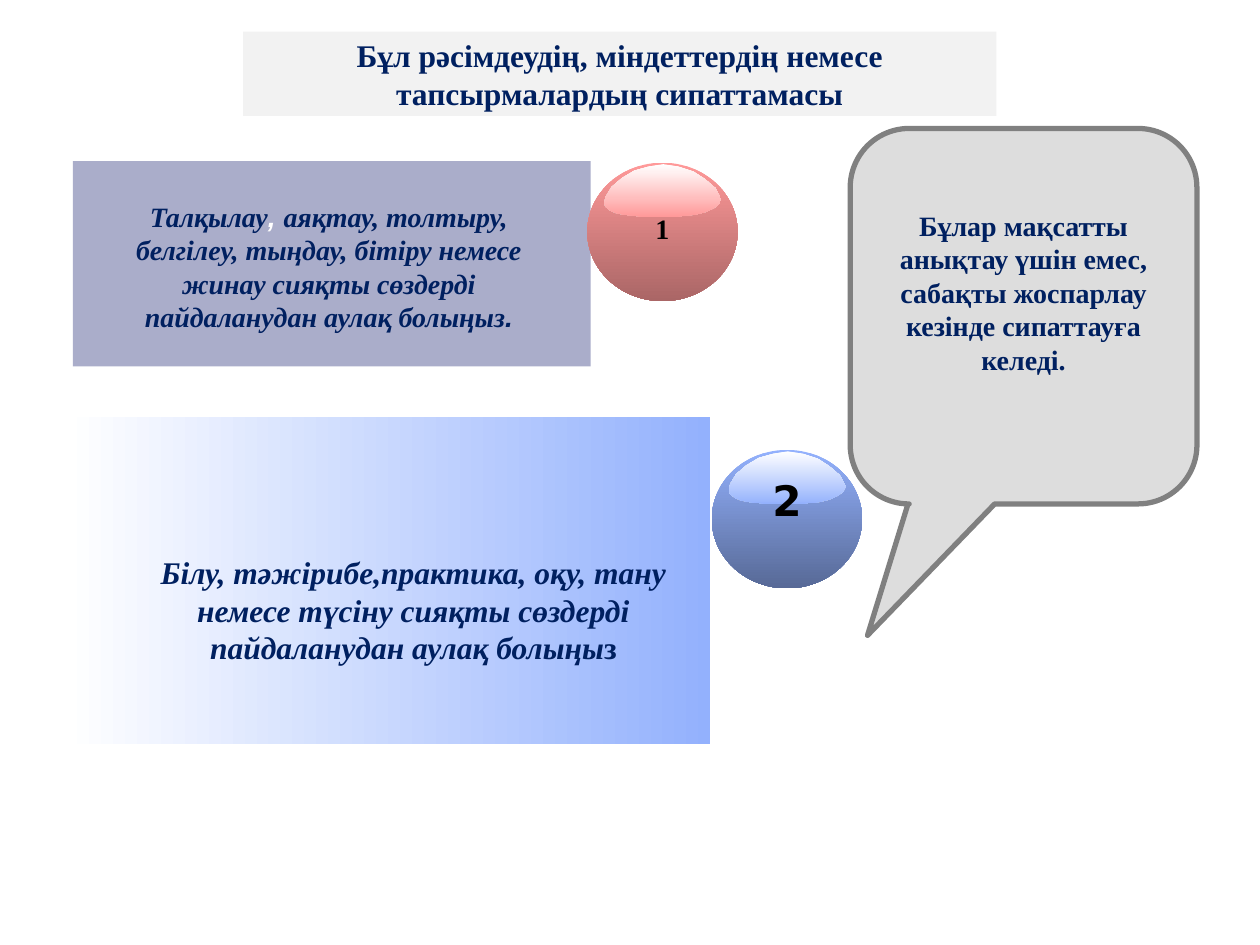
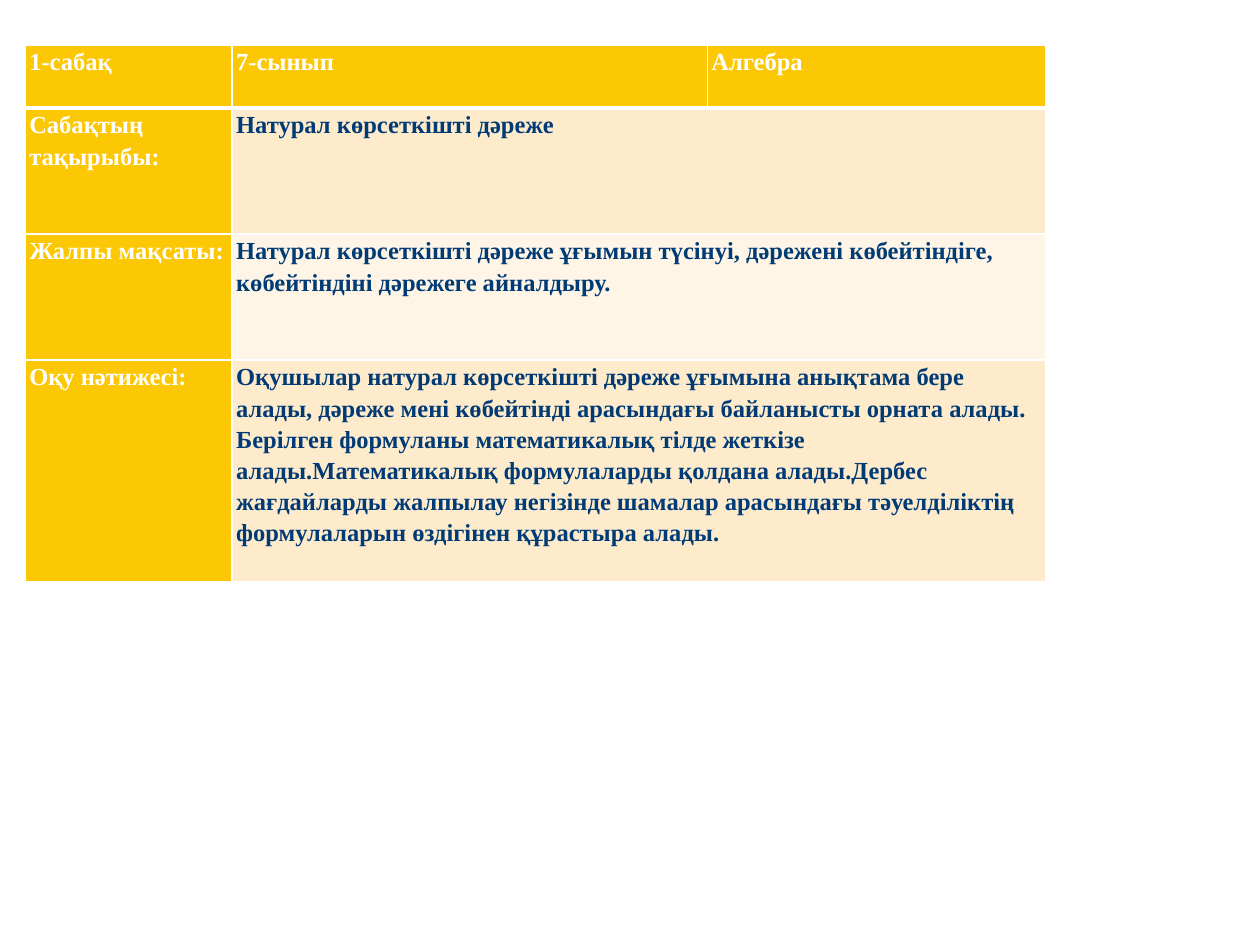
from dataclasses import dataclass

from pptx import Presentation
from pptx import util as u
from pptx.dml.color import RGBColor
from pptx.enum import shapes, text
from pptx.oxml import parse_xml
from pptx.oxml.ns import nsdecls


@dataclass(frozen=True)
class Theme:
    """Colours, fonts and type sizes of the deck."""
    navy: str = "002060"
    cell_blue: str = "003B76"
    white: str = "FFFFFF"
    black: str = "000000"
    title_band: str = "F2F2F2"
    lilac: str = "AAADCA"
    sky: str = "93B1FD"
    sky_dark: str = "576996"
    rose: str = "FF9999"
    rose_dark: str = "AA6666"
    bubble: str = "DDDDDD"
    bubble_edge: str = "808080"
    amber: str = "FCC704"
    cream: str = "FEEBCC"
    pale_cream: str = "FEF5E7"
    serif: str = "Times New Roman"
    sans: str = "Arial"
    digit: str = "DejaVu Sans"
    heading: int = 18
    body: int = 16
    cell: int = 14
    number: int = 24


THEME = Theme()
GLOSS_OUTLINE = [
    (231, 61), (236, 71), (231, 81), (221, 89), (203, 97), (183, 102), (160, 104),
    (142, 107), (84, 107), (61, 104), (41, 102), (25, 99), (13, 94), (3, 86), (0, 79),
    (3, 66), (15, 46), (36, 28), (61, 13), (89, 5), (119, 0), (150, 5), (180, 15),
    (203, 30), (224, 48),
]


def cm(*lengths):
    """Turn plain numbers into centimetre lengths."""
    return [u.Cm(length) for length in lengths]


def write(frame, *runs, size=THEME.body, font=THEME.serif, color=THEME.navy, bold=True,
          italic=False, align=text.PP_ALIGN.CENTER, spacing=None, after=None):
    """Write one paragraph; a run is a string or a (string, overrides) pair."""
    paragraph = frame.paragraphs[0]
    paragraph.alignment = align
    if spacing:
        paragraph.line_spacing = spacing
    if after:
        paragraph.space_after = u.Pt(after)
    base = dict(size=size, font=font, color=color, bold=bold, italic=italic)
    for part in runs:
        words, overrides = (part, {}) if isinstance(part, str) else part
        look = {**base, **overrides}
        run = paragraph.add_run()
        run.text = words
        run.font.size = u.Pt(look["size"])
        run.font.name = look["font"]
        run.font.bold = look["bold"]
        run.font.italic = look["italic"]
        run.font.color.rgb = RGBColor.from_string(look["color"])


def paint(shape, *colors, angle=0):
    """Fill a shape with one colour or a two-colour gradient, without outline or shadow."""
    shape.shadow.inherit = False
    shape.line.fill.background()
    if len(colors) == 1:
        shape.fill.solid()
        shape.fill.fore_color.rgb = RGBColor.from_string(colors[0])
        return
    shape.fill.gradient()
    shape.fill.gradient_angle = angle
    for stop, color in zip(shape.fill.gradient_stops, colors):
        stop.color.rgb = RGBColor.from_string(color)


def add_panel(slide, box, *colors):
    """Add a filled rectangle and return it."""
    panel = slide.shapes.add_shape(shapes.MSO_SHAPE.RECTANGLE, *cm(*box))
    paint(panel, *colors)
    return panel


def add_text(owner, box, *runs, wrap=True, **look):
    """Add a text box to a slide or group."""
    frame = owner.shapes.add_textbox(*cm(*box)).text_frame
    frame.word_wrap = wrap
    write(frame, *runs, **look)


def add_ball(slide, left, top, number, light, dark, drop, **look):
    """Add a glossy numbered ball."""
    width, height = 3.03, 2.79
    ball = slide.shapes.add_group_shape()
    body = ball.shapes.add_shape(shapes.MSO_SHAPE.OVAL, *cm(left, top, width, height))
    paint(body, light, dark, angle=270)
    outline = ball.shapes.build_freeform(*GLOSS_OUTLINE[0], scale=u.Cm(0.01))
    outline.add_line_segments(GLOSS_OUTLINE[1:], close=True)
    gloss = outline.convert_to_shape(*cm(left + 0.34, top + 0.03))
    paint(gloss, THEME.white, light, angle=270)
    add_text(ball, (left, top + drop, width, 1), number, color=THEME.black, **look)


def add_callout(slide, box, words):
    """Add the rounded speech bubble."""
    bubble = slide.shapes.add_shape(
        shapes.MSO_SHAPE.ROUNDED_RECTANGULAR_CALLOUT, *cm(*box))
    for index, value in enumerate((-0.45, 0.85, 0.17)):
        bubble.adjustments[index] = value
    paint(bubble, THEME.bubble)
    bubble.line.color.rgb = RGBColor.from_string(THEME.bubble_edge)
    bubble.line.width = u.Pt(3)
    frame = bubble.text_frame
    frame.vertical_anchor = text.MSO_ANCHOR.MIDDLE
    frame.margin_bottom = u.Cm(1.1)
    write(frame, words)


def border(cell, bottom):
    """Give a cell white borders, with its own bottom width in points."""
    edges = {"L": 1, "R": 1, "T": 1, "B": bottom}
    for index, (side, width) in enumerate(edges.items()):
        cell._tc.get_or_add_tcPr().insert(index, parse_xml(
            f'<a:ln{side} {nsdecls("a")} w="{u.Pt(width)}"><a:solidFill>'
            f'<a:srgbClr val="{THEME.white}"/></a:solidFill></a:ln{side}>'))


def add_lesson_table(slide, rows, widths, heights):
    """Add the lesson plan; two-part rows span the last two columns."""
    table = slide.shapes.add_table(
        len(rows), len(widths), *cm(0.51, 0.91, sum(widths), sum(heights))).table
    table.horz_banding = False
    for column, width in zip(table.columns, widths):
        column.width = u.Cm(width)
    for r, (words, height) in enumerate(zip(rows, heights)):
        table.rows[r].height = u.Cm(height)
        if len(words) < len(widths):
            table.cell(r, 1).merge(table.cell(r, 2))
        for c in range(len(widths)):
            cell = table.cell(r, c)
            heading = r == 0 or c == 0
            tint = THEME.cream if r % 2 else THEME.pale_cream
            cell.fill.solid()
            cell.fill.fore_color.rgb = RGBColor.from_string(
                THEME.amber if heading else tint)
            border(cell, 3 if r == 0 else 1)
            cell.margin_left = cell.margin_right = u.Cm(0.08)
            cell.margin_top = cell.margin_bottom = 0
            if c < len(words):
                write(cell.text_frame, words[c], size=THEME.cell,
                      color=THEME.white if heading else THEME.cell_blue,
                      align=text.PP_ALIGN.LEFT, spacing=1.15,
                      after=10 if heading else None)


def build_verbs_slide(slide):
    """Build the slide on words to avoid."""
    title = add_panel(slide, (4.9, 0.64, 15.19, 1.7), THEME.title_band)
    title.text_frame.vertical_anchor = text.MSO_ANCHOR.MIDDLE
    write(title.text_frame,
          "Бұл рәсімдеудің, міндеттердің немесе тапсырмалардың сипаттамасы",
          size=THEME.heading)
    add_panel(slide, (1.47, 3.25, 10.44, 4.14), THEME.lilac)
    add_text(slide, (1.7, 3.89, 9.86, 3.18), "Талқылау",
             (", ", dict(font=THEME.sans, color=THEME.white)),
             "аяқтау, толтыру, белгілеу, тыңдау, бітіру немесе жинау сияқты сөздерді "
             "пайдаланудан аулақ болыңыз",
             (".", dict(font=THEME.sans)), italic=True)
    add_panel(slide, (1.32, 8.41, 13, 6.6), THEME.white, THEME.sky)
    add_ball(slide, 14.35, 9.07, "2", THEME.sky, THEME.sky_dark, 0.38,
             size=THEME.number, font=THEME.digit)
    add_text(slide, (2.9, 11.02, 10.87, 2.54),
             "Білу, тәжірибе,практика, оқу, тану немесе түсіну сияқты сөздерді "
             "пайдаланудан аулақ болыңы", ("з", dict(italic=False)),
             size=THEME.heading, italic=True)
    add_callout(slide, (17.14, 2.59, 6.99, 7.57),
                "Бұлар мақсатты анықтау үшін емес, сабақты жоспарлау кезінде "
                "сипаттауға келеді.")
    add_ball(slide, 11.84, 3.28, "1", THEME.rose, THEME.rose_dark, 0.86)


def build_lesson_slide(slide):
    """Build the lesson plan slide."""
    add_lesson_table(slide, [
        ("1-сабақ", "7-сынып", "Алгебра"),
        ("Сабақтың тақырыбы:", "Натурал көрсеткішті дәреже"),
        ("Жалпы мақсаты:",
         "Натурал көрсеткішті дәреже ұғымын түсінуі, дәрежені көбейтіндіге, "
         "көбейтіндіні дәрежеге айналдыру."),
        ("Оқу нәтижесі:",
         "Оқушылар натурал көрсеткішті дәреже ұғымына анықтама бере алады, дәреже "
         "мені көбейтінді арасындағы байланысты орната алады. Берілген формуланы "
         "математикалық тілде жеткізе алады.Математикалық формулаларды қолдана "
         "алады.Дербес жағдайларды жалпылау негізінде шамалар арасындағы "
         "тәуелділіктің формулаларын өздігінен құрастыра алады."),
    ], widths=(4.17, 9.58, 6.83), heights=(1.27, 2.54, 2.54, 4.47))


def main():
    """Build and save the deck."""
    deck = Presentation()
    deck.slide_width, deck.slide_height = cm(25.4, 19.05)
    for build in (build_verbs_slide, build_lesson_slide):
        build(deck.slides.add_slide(deck.slide_layouts[6]))
    deck.save("out.pptx")


if __name__ == "__main__":
    main()
